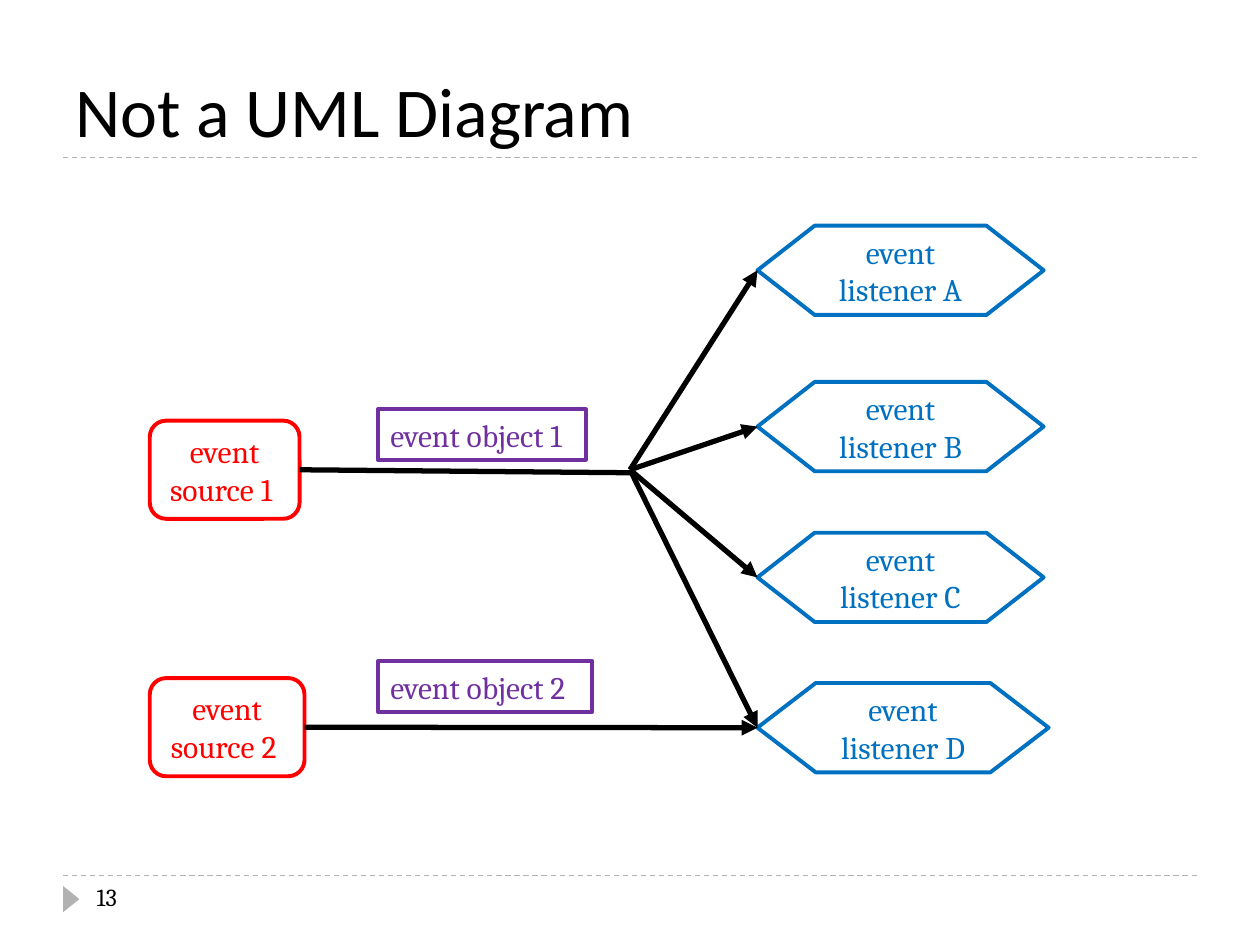
from lxml.etree import SubElement
from pptx import Presentation
from pptx.dml.color import RGBColor
from pptx.enum.dml import MSO_LINE
from pptx.enum.shapes import MSO_CONNECTOR, MSO_SHAPE
from pptx.enum.text import MSO_ANCHOR, PP_ALIGN
from pptx.oxml.ns import qn
from pptx.util import Cm, Pt

BLACK = RGBColor(0x00, 0x00, 0x00)
GREY = RGBColor(0xB2, 0xB2, 0xB2)
RED = RGBColor(0xFF, 0x00, 0x00)
BLUE = RGBColor(0x00, 0x70, 0xC0)
PURPLE = RGBColor(0x70, 0x30, 0xA0)

# Lengths in centimetres
SOURCE_LEFT, SOURCE_HEIGHT = 3.02, 1.98
SOURCES = [("1", 8.48, 3.02), ("2", 13.67, 3.12)]
LISTENER_LEFT, LISTENER_HEIGHT = 15.27, 1.8
LISTENERS = [("A", 4.55, 5.77), ("B", 7.7, 5.77), ("C", 10.74, 5.77), ("D", 13.77, 5.87)]
OBJECT_LEFT, OBJECT_HEIGHT = 7.62, 1.02
OBJECTS = [("1", 8.25, 4.19), ("2", 13.33, 4.32)]
HUB = (12.7, 9.47)


def set_values(target, values):
    for name, value in values.items():
        setattr(target, name, value)


def write(shape, lines, font, frame_format, align=PP_ALIGN.LEFT):
    """Put one paragraph per line into the shape."""
    frame = shape.text_frame
    set_values(frame, frame_format)
    for index, line in enumerate(lines):
        para = frame.add_paragraph() if index else frame.paragraphs[0]
        para.alignment = align
        span = para.add_run()
        span.text = line
        set_values(span.font, {"name": font["name"], "size": Pt(font["size"])})
        span.font.color.rgb = font["color"]


def add_text(page, area, text, font, anchor):
    box = page.shapes.add_textbox(*map(Cm, area))
    write(box, [text], font, {"word_wrap": True, "vertical_anchor": anchor})


def add_node(page, kind, area, lines, color, align=PP_ALIGN.CENTER, wrap=False):
    """Add an unfilled, outlined shape with text in the outline colour."""
    node = page.shapes.add_shape(kind, *map(Cm, area))
    node.shadow.inherit = False
    node.fill.background()
    node.line.color.rgb = color
    node.line.width = Pt(2.25)
    font = {"name": "Cambria", "size": 18, "color": color}
    write(node, lines, font,
          {"word_wrap": wrap, "vertical_anchor": MSO_ANCHOR.MIDDLE}, align)


def add_line(page, start, end, color=BLACK, width=3, dash=None, arrow=False):
    line = page.shapes.add_connector(MSO_CONNECTOR.STRAIGHT, *map(Cm, (*start, *end)))
    line.line.color.rgb = color
    set_values(line.line, {"width": Pt(width), "dash_style": dash})
    if arrow:
        SubElement(line.line._get_or_add_ln(), qn("a:tailEnd"), type="triangle")
    SubElement(line._element.spPr, qn("a:effectLst"))


def add_frame(page):
    """Add the title, the dashed rules and the page number."""
    for top in (17.65, 3.18):
        add_line(page, (1.27, top), (24.13, top), GREY, 0.75, MSO_LINE.DASH)
    marker = page.shapes.add_shape(MSO_SHAPE.ISOSCELES_TRIANGLE,
                                   *map(Cm, (1.17, 17.96, 0.53, 0.33)))
    marker.rotation = 90
    marker.shadow.inherit = False
    marker.fill.solid()
    marker.fill.fore_color.rgb = GREY
    marker.line.fill.background()
    add_text(page, (1.27, 0.64, 22.86, 2.54), "Not a UML Diagram",
             {"name": "Calibri", "size": 40, "color": BLACK}, MSO_ANCHOR.BOTTOM)
    add_text(page, (1.7, 17.65, 5.51, 1.02), "13",
             {"name": "Cambria", "size": 14, "color": BLACK}, MSO_ANCHOR.TOP)


def add_nodes(page):
    for name, top, width in SOURCES:
        add_node(page, MSO_SHAPE.ROUNDED_RECTANGLE,
                 (SOURCE_LEFT, top, width, SOURCE_HEIGHT),
                 ["event", f"source {name} "], RED)
    for name, top, width in LISTENERS:
        add_node(page, MSO_SHAPE.FLOWCHART_PREPARATION,
                 (LISTENER_LEFT, top, width, LISTENER_HEIGHT),
                 ["event", f" listener {name} "], BLUE)


def add_flows(page):
    """Link source 1 to every listener through the hub, and source 2 to the last."""
    exits = [(SOURCE_LEFT + width, top + SOURCE_HEIGHT / 2) for _, top, width in SOURCES]
    entries = [(LISTENER_LEFT, top + LISTENER_HEIGHT / 2) for _, top, _ in LISTENERS]
    add_line(page, exits[0], (HUB[0], HUB[1] + 0.06))
    for entry in entries:
        add_line(page, HUB, entry, arrow=True)
    add_line(page, exits[1], entries[-1], arrow=True)


def add_event_objects(page):
    for name, top, width in OBJECTS:
        add_node(page, MSO_SHAPE.FLOWCHART_PROCESS,
                 (OBJECT_LEFT, top, width, OBJECT_HEIGHT),
                 [f"event object {name}"], PURPLE, PP_ALIGN.LEFT, wrap=True)


def main():
    deck = Presentation()
    set_values(deck, {"slide_width": Cm(25.4), "slide_height": Cm(19.05)})
    page = deck.slides.add_slide(deck.slide_layouts[6])
    add_frame(page)
    add_nodes(page)
    add_flows(page)
    add_event_objects(page)
    deck.save("out.pptx")


if __name__ == "__main__":
    main()
